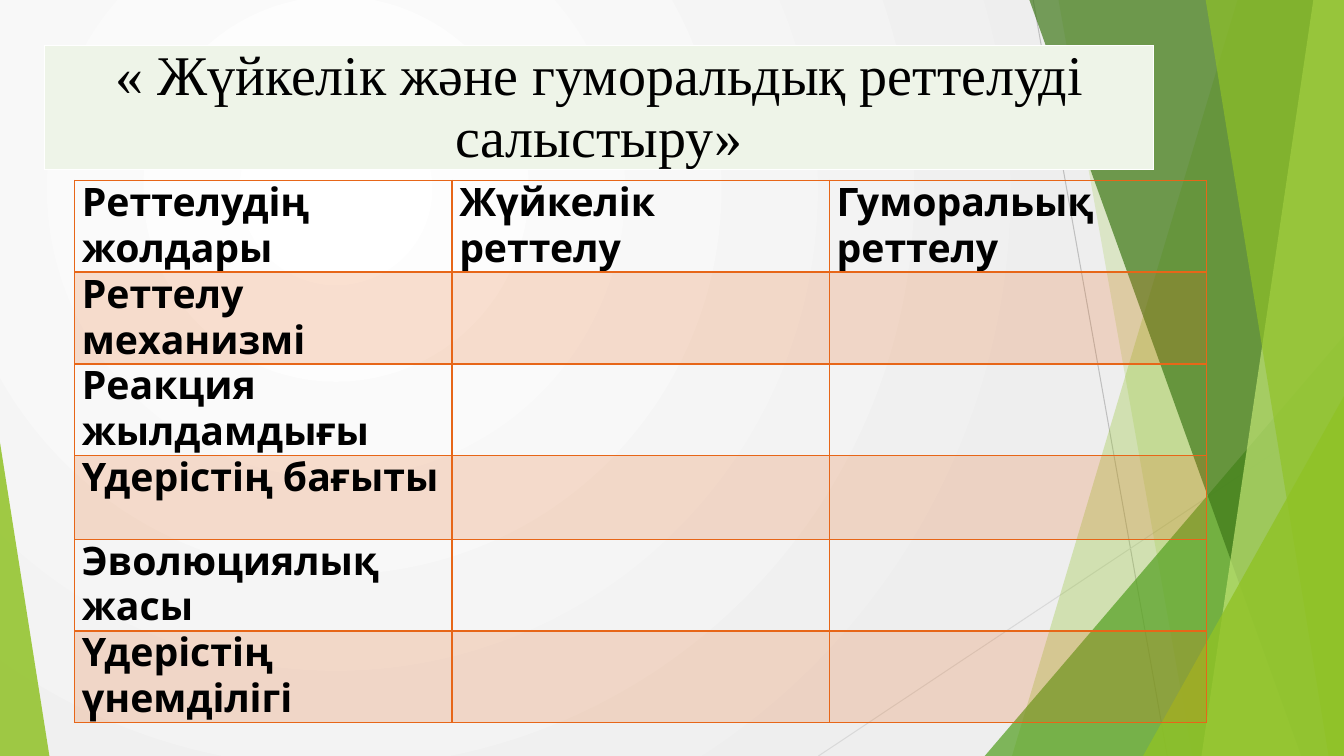
"""Build a slide with a blank table comparing nervous and humoral regulation."""
import pptx
import pptx.util
import pptx.dml.color
import pptx.enum.shapes
import pptx.enum.text
import pptx.oxml
import pptx.oxml.ns
import lxml.etree

Pt = pptx.util.Pt
RGB = pptx.dml.color.RGBColor
qn = pptx.oxml.ns.qn
WHITE = RGB(0xFF, 0xFF, 0xFF)
BLACK = RGB(0, 0, 0)
PALE = RGB(0xEE, 0xEE, 0xEE)
MINT = RGB(0xEE, 0xF4, 0xE8)
LIME = RGB(0x90, 0xC2, 0x26)
GREEN = RGB(0x54, 0xA0, 0x21)
DARK = RGB(0x3F, 0x78, 0x19)
LIGHT = RGB(0xC0, 0xE4, 0x74)
ORANGE = RGB(0xE7, 0x66, 0x18)
GREY = RGB(0xBF, 0xBF, 0xBF)
SILVER = RGB(0xD9, 0xD9, 0xD9)
WIDE, HIGH = 960, 540


def paint(fill, color, alpha):
    """Fill with a partly transparent colour."""
    fill.solid()
    fill.fore_color.rgb = color
    node = fill._xPr.find(qn("a:solidFill"))[0]
    lxml.etree.SubElement(node, qn("a:alpha")).set("val", str(alpha * 1000))


def style(cell, color, inset, top=1, base=1):
    """Draw the four borders of a cell and set its side insets."""
    props = cell._tc.get_or_add_tcPr()
    for side, width in zip("LRTB", (1, 1, top, base)):
        line = lxml.etree.SubElement(props, qn(f"a:ln{side}"), w=str(Pt(width)))
        solid = lxml.etree.SubElement(line, qn("a:solidFill"))
        lxml.etree.SubElement(solid, qn("a:srgbClr"), val=str(color))
    cell.margin_left = cell.margin_right = Pt(inset)
    cell.margin_top = cell.margin_bottom = 0


deck = pptx.Presentation()
deck.slide_width, deck.slide_height = Pt(WIDE), Pt(HIGH)
slide = deck.slides.add_slide(deck.slide_layouts[6])
shapes = slide.shapes

back = slide.background.fill
back.gradient()
for stop, color, place in zip(back.gradient_stops, (WHITE, PALE), (0, 1)):
    stop.color.rgb = color
    stop.position = place
grad = back._xPr.find(qn("a:gradFill"))
grad.remove(grad.find(qn("a:lin")))
round_path = lxml.etree.SubElement(grad, qn("a:path"), path="circle")
lxml.etree.SubElement(round_path, qn("a:fillToRect"),
                      l="50000", t="50000", r="100000", b="100000")

rays = [(738, 0, 833.8, HIGH, GREY), (WIDE, 290.2, 584.6, HIGH, SILVER)]
for x1, y1, x2, y2, color in rays:
    ray = shapes.add_connector(pptx.enum.shapes.MSO_CONNECTOR.STRAIGHT,
                               Pt(x1), Pt(y1), Pt(x2), Pt(y2))
    ray.line.color.rgb = color
    ray.line.width = Pt(0.75)
    lxml.etree.SubElement(ray._element.spPr, qn("a:effectLst"))

bands = [
    ("wing", (884.2, 722.9), LIME, 30),
    ("wing", (756, 851.8), LIME, 20),
    ("peak", (703.4, 240, 256.6, 1), GREEN, 72),
    ("wing", (735.1, 929.5), DARK, 70),
    ("wing", (938.2, 858.2), LIGHT, 70),
    ("wing", (861.1, 949), LIME, 65),
    ("peak", (816.5, 283, 143.5, 1), LIME, 80),
    ("peak", (0, 316.1, 35.3, 0), LIME, 85),
]
for kind, place, color, alpha in bands:
    if kind == "wing":
        top, base = place
        pen = shapes.build_freeform(Pt(top), Pt(-0.6))
        pen.add_line_segments([(Pt(WIDE), Pt(-0.6)), (Pt(WIDE), Pt(HIGH)),
                               (Pt(base), Pt(HIGH))])
        band = pen.convert_to_shape()
    else:
        left, top, width, tip = place
        band = shapes.add_shape(pptx.enum.shapes.MSO_SHAPE.ISOSCELES_TRIANGLE,
                                Pt(left), Pt(top), Pt(width), Pt(HIGH - top))
        band.adjustments[0] = tip
    band.shadow.inherit = False
    band.line.fill.background()
    paint(band.fill, color, alpha)

title = shapes.add_table(1, 1, Pt(32), Pt(32.4), Pt(792), Pt(80)).table
title.first_row = title.horz_banding = False
cell = title.cell(0, 0)
style(cell, WHITE, 8.64)
cell.fill.solid()
cell.fill.fore_color.rgb = MINT
cell.text = "« Жүйкелік және гуморальдық реттелуді салыстыру»"
line = cell.text_frame.paragraphs[0]
line.alignment = pptx.enum.text.PP_ALIGN.CENTER
line.font.name = "Times New Roman"
line.font.size = Pt(40)
line.font.color.rgb = BLACK

rows = [
    ("Реттелудің жолдары", "Жүйкелік реттелу", "Гуморальық реттелу"),
    ("Реттелу механизмі", "", ""),
    ("Реакция жылдамдығы", "", ""),
    ("Үдерістің бағыты", "", ""),
    ("Эволюциялық жасы", "", ""),
    ("Үдерістің үнемділігі", "", ""),
]
grid = shapes.add_table(len(rows), 3, Pt(53.3), Pt(128.9),
                        Pt(808.8), Pt(59.5 * len(rows))).table
grid.first_row = grid.horz_banding = False
for r, texts in enumerate(rows):
    for c, text in enumerate(texts):
        cell = grid.cell(r, c)
        style(cell, ORANGE, 5.2, 2 if r == 1 else 1, 2 if r == 0 else 1)
        if r % 2:
            paint(cell.fill, ORANGE, 20)
        else:
            cell.fill.background()
        if text:
            cell.text = text
            font = cell.text_frame.paragraphs[0].font
            font.name = "Karla"
            font.size = Pt(28)
            font.bold = True
            font.color.rgb = BLACK

deck.save("out.pptx")
